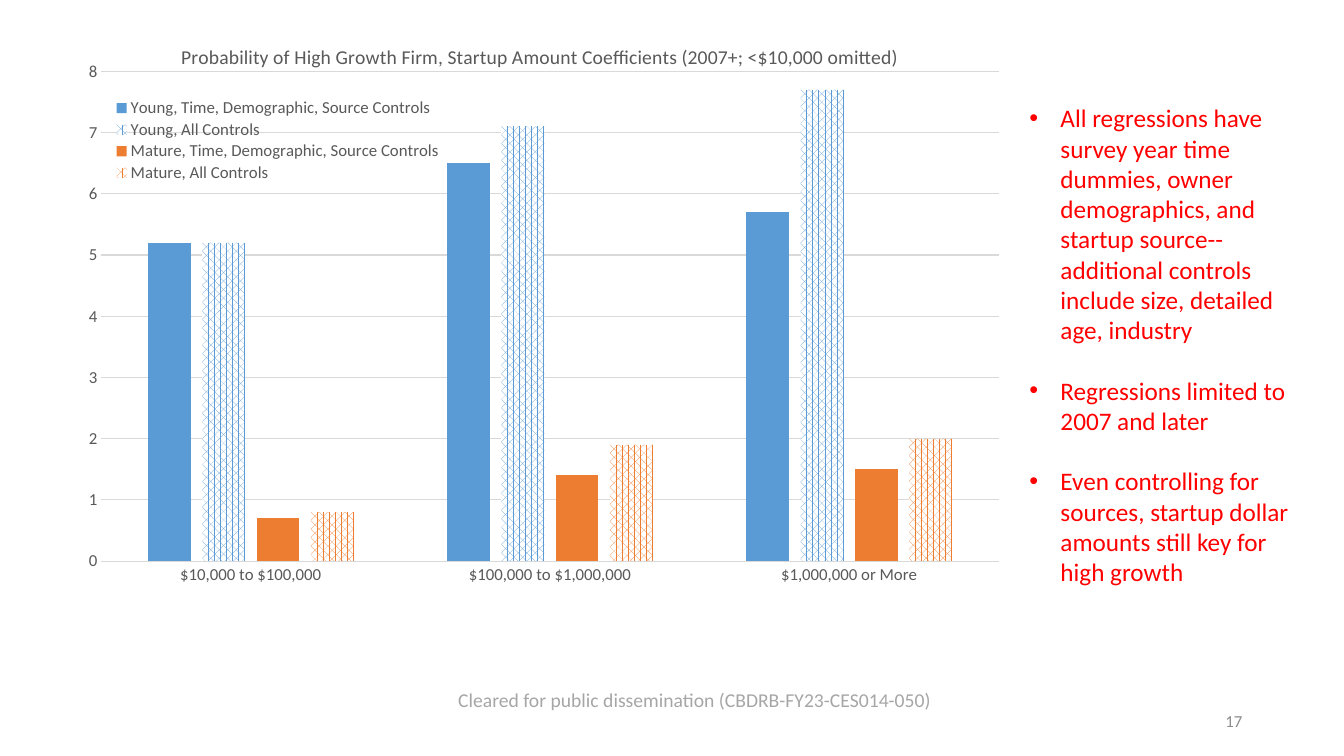
from dataclasses import dataclass

from lxml.etree import SubElement
from pptx import Presentation
from pptx.chart.chart import Chart
from pptx.chart.data import CategoryChartData
from pptx.dml.color import RGBColor
from pptx.enum.chart import XL_CHART_TYPE as ChartType
from pptx.enum.chart import XL_LEGEND_POSITION as LegendPosition
from pptx.enum.chart import XL_TICK_MARK as TickMark
from pptx.enum.dml import MSO_PATTERN as Pattern
from pptx.enum.text import MSO_ANCHOR as Anchor
from pptx.enum.text import PP_ALIGN as Align
from pptx.oxml.ns import qn
from pptx.slide import Slide
from pptx.text.text import Font
from pptx.util import Inches, Pt


@dataclass(frozen=True)
class Theme:
    font: str = "Calibri"
    white: str = "FFFFFF"
    young: str = "5B9BD5"
    mature: str = "ED7D31"
    chart_text: str = "595959"
    grid: str = "D9D9D9"
    bullet: str = "FF0000"
    clearance: str = "A6A6A6"
    number: str = "8C8C8C"
    small: int = 12
    medium: int = 14
    large: int = 18
    bullet_gap: float = 21.6
    hairline: float = 0.75


@dataclass(frozen=True)
class Area:
    left: float
    top: float
    width: float
    height: float


@dataclass(frozen=True)
class TextBlock:
    area: Area
    lines: tuple[str, ...]
    size: int
    color: str
    align: Align = Align.LEFT
    anchor: Anchor = Anchor.TOP
    bulleted: bool = False


@dataclass(frozen=True)
class GrowthSeries:
    name: str
    values: tuple[float, ...]
    color: str
    patterned: bool


THEME = Theme()
TITLE = "Probability of High Growth Firm, Startup Amount Coefficients (2007+; <$10,000 omitted)"
CATEGORIES = ("$10,000 to $100,000", "$100,000 to $1,000,000", "$1,000,000 or More")
SERIES = (
    GrowthSeries("Young, Time, Demographic, Source Controls", (5.2, 6.5, 5.7), THEME.young, False),
    GrowthSeries("Young, All Controls", (5.2, 7.1, 7.7), THEME.young, True),
    GrowthSeries("Mature, Time, Demographic, Source Controls", (0.7, 1.4, 1.5), THEME.mature, False),
    GrowthSeries("Mature, All Controls", (0.8, 1.9, 2), THEME.mature, True),
)
CHART_AREA = Area(0.72, 0.21, 9.47, 6.23)
TEXT_BLOCKS = (
    TextBlock(Area(9.42, 6.95, 3, 0.4), ("17",), THEME.small, THEME.number, Align.RIGHT, Anchor.MIDDLE),
    TextBlock(
        Area(4.18, 6.78, 5.42, 0.34),
        ("Cleared for public dissemination (CBDRB-FY23-CES014-050)",),
        THEME.medium,
        THEME.clearance,
        Align.CENTER,
    ),
    TextBlock(
        Area(10.11, 0.97, 2.79, 4.95),
        (
            "All regressions have survey year time dummies, owner demographics, and "
            "startup source--additional controls include size, detailed age, industry",
            "Regressions limited to 2007 and later",
            "Even controlling for sources, startup dollar amounts still key for high growth",
        ),
        THEME.large,
        THEME.bullet,
        bulleted=True,
    ),
)


def rgb(color: str) -> RGBColor:
    return RGBColor.from_string(color)


def style_font(font: Font, size: int, color: str) -> None:
    font.name = THEME.font
    font.size = Pt(size)
    font.bold = False
    font.color.rgb = rgb(color)


def add_text(page: Slide, block: TextBlock) -> None:
    area = block.area
    box = page.shapes.add_textbox(
        Inches(area.left), Inches(area.top), Inches(area.width), Inches(area.height)
    )
    frame = box.text_frame
    frame.word_wrap = True
    frame.vertical_anchor = block.anchor
    frame.text = "\n".join(block.lines)
    for index, para in enumerate(frame.paragraphs):
        para.alignment = block.align
        if index:
            para.space_before = Pt(THEME.bullet_gap)
        if block.bulleted:
            properties = para._p.get_or_add_pPr()
            properties.set("marL", str(Inches(0.31)))
            properties.set("indent", str(-Inches(0.31)))
            SubElement(properties, qn("a:buFont"), typeface="Arial")
            SubElement(properties, qn("a:buChar"), char="•")
        for span in para.runs:
            style_font(span.font, block.size, block.color)


def place_part(element, index: int, left: float, top: float, size: tuple[float, ...] = (), inner: bool = False) -> None:
    for previous in element.findall(qn("c:layout")):
        element.remove(previous)
    layout = SubElement(element, qn("c:layout"))
    element.insert(index, layout)
    manual = SubElement(layout, qn("c:manualLayout"))
    if inner:
        SubElement(manual, qn("c:layoutTarget"), val="inner")
    for mode in ("xMode", "yMode"):
        SubElement(manual, qn(f"c:{mode}"), val="edge")
    for name, value in zip("xywh", (left, top, *size)):
        SubElement(manual, qn(f"c:{name}"), val=str(value))


def style_axes(chart: Chart) -> None:
    for axis in (chart.category_axis, chart.value_axis):
        axis.major_tick_mark = axis.minor_tick_mark = TickMark.NONE
        style_font(axis.tick_labels.font, THEME.small, THEME.chart_text)
    values = chart.value_axis
    values.minimum_scale, values.maximum_scale, values.major_unit = 0, 8, 1
    values.tick_labels.number_format = "General"
    values.tick_labels.number_format_is_linked = False
    values.format.line.fill.background()
    for line in (chart.category_axis.format.line, values.major_gridlines.format.line):
        line.color.rgb = rgb(THEME.grid)
        line.width = Pt(THEME.hairline)


def add_growth_chart(page: Slide) -> None:
    data = CategoryChartData()
    data.categories = CATEGORIES
    for entry in SERIES:
        data.add_series(entry.name, entry.values)
    area = CHART_AREA
    chart = page.shapes.add_chart(
        ChartType.COLUMN_CLUSTERED,
        Inches(area.left), Inches(area.top), Inches(area.width), Inches(area.height),
        data,
    ).chart
    style_font(chart.font, THEME.small, THEME.chart_text)

    title = chart.chart_title
    title.text_frame.text = TITLE
    style_font(title.text_frame.paragraphs[0].runs[0].font, THEME.medium, THEME.chart_text)
    title.include_in_layout = False
    place_part(title._element, 1, 0.11, 0.03)

    plot = chart.plots[0]
    plot.gap_width, plot.overlap, plot.vary_by_categories = 219, -27, False
    for series, entry in zip(plot.series, SERIES):
        fill = series.format.fill
        if entry.patterned:
            fill.patterned()
            fill.pattern = Pattern.PERCENT_60
            fill.fore_color.rgb = rgb(entry.color)
            fill.back_color.rgb = rgb(THEME.white)
        else:
            fill.solid()
            fill.fore_color.rgb = rgb(entry.color)
        series.invert_if_negative = False
    style_axes(chart)
    place_part(chart._chartSpace.chart.plotArea, 0, 0.03, 0.08, (0.94, 0.78), inner=True)

    chart.has_legend = True
    legend = chart.legend
    legend.position = LegendPosition.RIGHT
    legend.include_in_layout = True
    style_font(legend.font, THEME.small, THEME.chart_text)
    place_part(legend._element, 1, 0.04, 0.12, (0.35, 0.14))


def main() -> None:
    deck = Presentation()
    deck.slide_width, deck.slide_height = Inches(13.33), Inches(7.5)
    page = deck.slides.add_slide(deck.slide_layouts[6])
    for block in TEXT_BLOCKS:
        add_text(page, block)
    add_growth_chart(page)
    deck.save("out.pptx")


if __name__ == "__main__":
    main()
